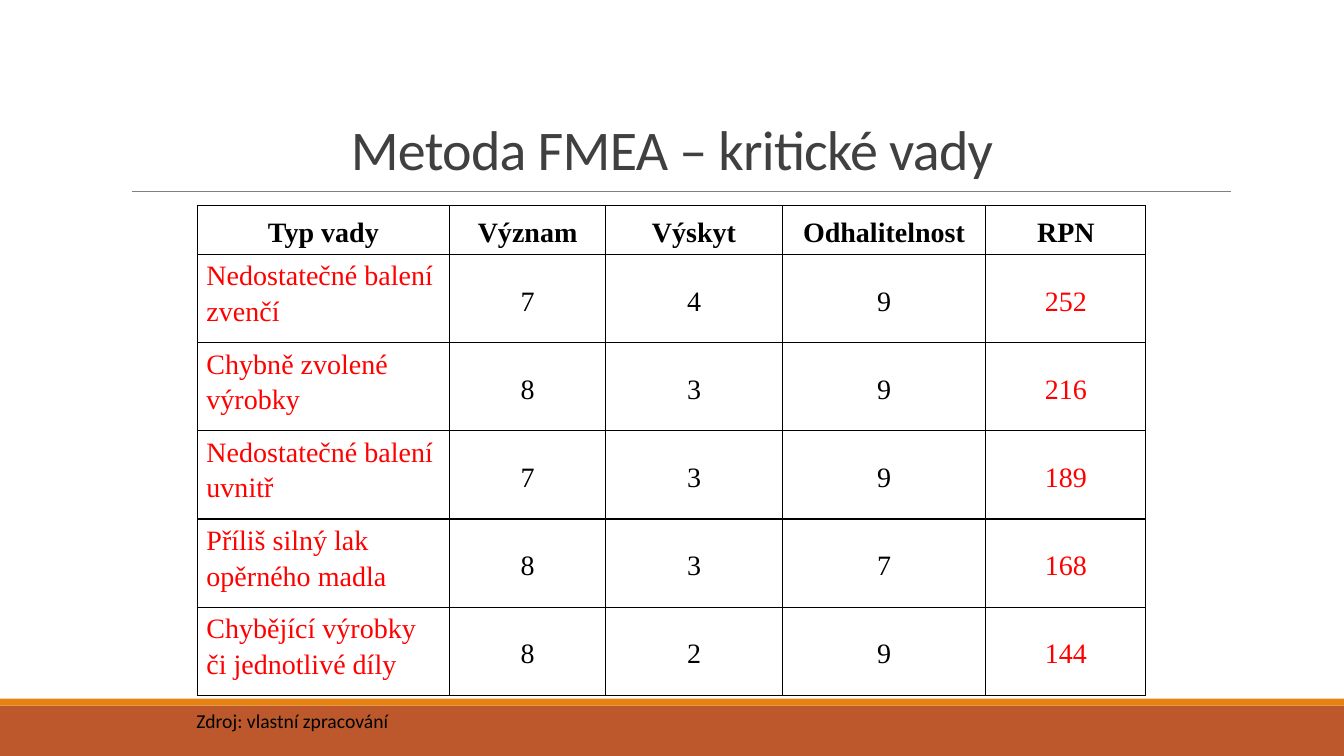
from dataclasses import dataclass
from pptx import Presentation
from pptx.dml.color import RGBColor
from pptx.enum.shapes import MSO_CONNECTOR, MSO_SHAPE
from pptx.enum.text import MSO_ANCHOR as ANCHOR, PP_ALIGN as ALIGN
from pptx.oxml import parse_xml
from pptx.oxml.ns import nsdecls, qn
from pptx.util import Pt


@dataclass
class Band:
    top: float
    height: float
    color: str


@dataclass
class Defect:
    name: str
    severity: int
    occurrence: int
    detection: int
    rpn: int


BANDS = [Band(504, 36, "BD582C"), Band(499, 5, "E48312")]
HEADERS = ["Typ vady", "Význam", "Výskyt", "Odhalitelnost", "RPN"]
DEFECTS = [
    Defect("Nedostatečné balení zvenčí", 7, 4, 9, 252),
    Defect("Chybně zvolené výrobky", 8, 3, 9, 216),
    Defect("Nedostatečné balení uvnitř", 7, 3, 9, 189),
    Defect("Příliš silný lak\nopěrného madla", 8, 3, 7, 168),
    Defect("Chybějící výrobky či jednotlivé díly", 8, 2, 9, 144),
]
COL_WIDTHS = [180, 111.75, 126, 145.5, 114.25]
HEADER_HEIGHT, ROW_HEIGHT = 35, 63


def rgb(color: str) -> RGBColor:
    return RGBColor.from_string(color)


def set_text(p, text: str, font: str, size: float, color: str, bold: bool = False) -> None:
    p.text = text
    p.font.name = font
    p.font.size = Pt(size)
    p.font.bold = bold
    p.font.color.rgb = rgb(color)


def add_band(s, band: Band, width: int) -> None:
    sp = s.shapes.add_shape(MSO_SHAPE.RECTANGLE, 0, Pt(band.top), width, Pt(band.height))
    sp.shadow.inherit = False
    sp.fill.solid()
    sp.fill.fore_color.rgb = rgb(band.color)
    sp.line.fill.background()


def add_rule(s) -> None:
    line = s.shapes.add_connector(MSO_CONNECTOR.STRAIGHT, Pt(94.3), Pt(136.8), Pt(879), Pt(136.8))
    line.line.color.rgb = rgb("808080")
    line.line.width = Pt(0.5)
    line._element.spPr.append(parse_xml(f"<a:effectLst {nsdecls('a')}/>"))


def add_label(s, box: tuple[float, float, float, float], text: str, size: float, color: str):
    tf = s.shapes.add_textbox(*map(Pt, box)).text_frame
    tf.word_wrap = True
    p = tf.paragraphs[0]
    set_text(p, text, "Calibri", size, color)
    return tf, p


def add_title(s) -> None:
    tf, p = add_label(s, (66, 59.75, 828, 73.5), "Metoda FMEA – kritické vady", 40, "404040")
    tf.vertical_anchor = ANCHOR.BOTTOM
    p.alignment = ALIGN.CENTER
    p.line_spacing = 0.85
    p._p.pPr.find(qn("a:defRPr")).set("spc", "-50")


def add_borders(cell) -> None:
    tc_pr = cell._tc.get_or_add_tcPr()
    for index, side in enumerate(("lnL", "lnR", "lnT", "lnB")):
        tc_pr.insert(index, parse_xml(
            f'<a:{side} {nsdecls("a")} w="{Pt(1)}"><a:solidFill>'
            f'<a:srgbClr val="000000"/></a:solidFill></a:{side}>'))


def fill_cell(cell, text: str, color: str, header: bool, centered: bool) -> None:
    cell.margin_left = cell.margin_right = Pt(6.5)
    cell.margin_top, cell.margin_bottom = Pt(1.2), 0
    cell.vertical_anchor = ANCHOR.MIDDLE if centered else ANCHOR.TOP
    cell.fill.background()
    add_borders(cell)
    p = cell.text_frame.paragraphs[0]
    set_text(p, text, "Times New Roman", 20, color, header)
    p.alignment = ALIGN.CENTER if centered else ALIGN.LEFT
    p.line_spacing = 1.15
    p.space_after = Pt(10)


def add_defect_table(s) -> None:
    rows = [HEADERS] + [[d.name, d.severity, d.occurrence, d.detection, d.rpn] for d in DEFECTS]
    heights = [HEADER_HEIGHT] + [ROW_HEIGHT] * len(DEFECTS)
    table = s.shapes.add_table(len(rows), len(HEADERS), Pt(141), Pt(146.8),
                               Pt(sum(COL_WIDTHS)), Pt(sum(heights))).table
    table.first_row = table.horz_banding = False
    for col, width in zip(table.columns, COL_WIDTHS):
        col.width = Pt(width)
    for row, height in zip(table.rows, heights):
        row.height = Pt(height)
    last = len(HEADERS) - 1
    for i, values in enumerate(rows):
        for j, value in enumerate(values):
            header = i == 0
            color = "FF0000" if not header and j in (0, last) else "000000"
            fill_cell(table.cell(i, j), str(value), color, header, header or j > 0)


def main() -> None:
    prs = Presentation()
    prs.slide_width, prs.slide_height = Pt(960), Pt(540)
    s = prs.slides.add_slide(prs.slide_layouts[6])
    for band in BANDS:
        add_band(s, band, prs.slide_width)
    add_rule(s)
    add_title(s)
    add_defect_table(s)
    add_label(s, (133.2, 502.5, 479.5, 24.5), "Zdroj: vlastní zpracování", 14, "000000")
    prs.save("out.pptx")


if __name__ == "__main__":
    main()
